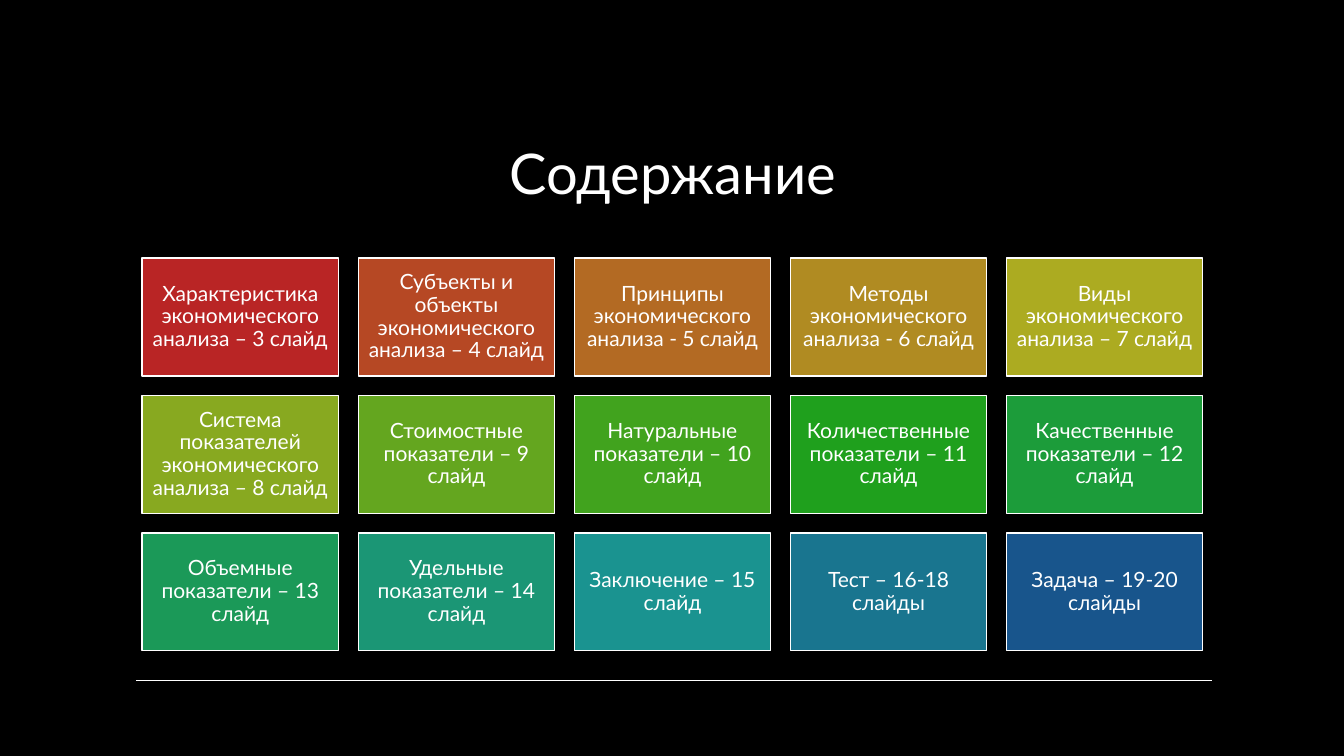
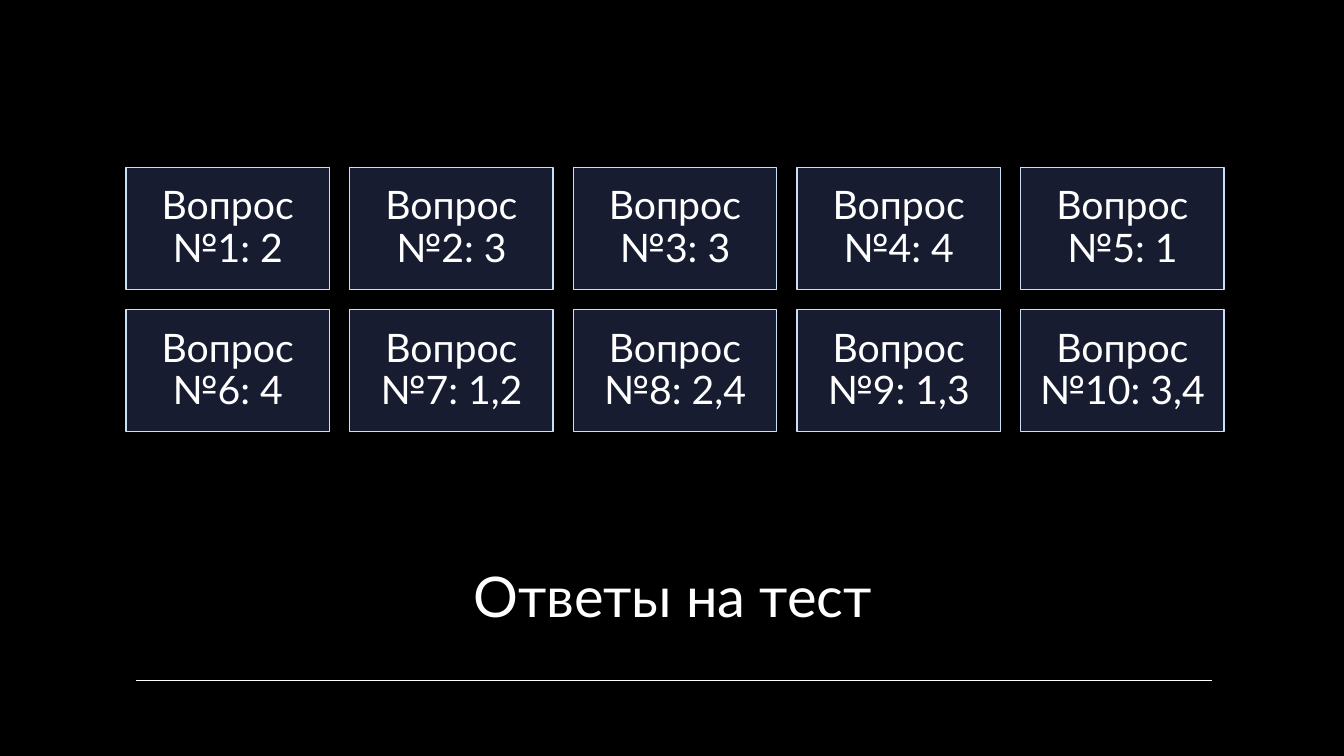
from lxml.etree import SubElement
from pptx import Presentation
from pptx.dml.color import RGBColor
from pptx.enum.shapes import MSO_CONNECTOR, MSO_SHAPE
from pptx.enum.text import MSO_ANCHOR, MSO_AUTO_SIZE, PP_ALIGN
from pptx.oxml.ns import qn
from pptx.util import Inches, Pt

# Shared style
FONT = "Lato"
BLACK = RGBColor(0x00, 0x00, 0x00)
WHITE = RGBColor(0xFF, 0xFF, 0xFF)
NAVY = RGBColor(0x18, 0x1C, 0x30)
PALE_BLUE = RGBColor(0xC8, 0xE1, 0xF4)
RAINBOW = [RGBColor.from_string(code) for code in (
    "B92525", "B64824", "B36A23", "B08B22", "ACAB21",
    "88A920", "64A61F", "41A31E", "1FA01D", "1C9C3A",
    "1B9958", "1B9675", "1A9390", "19758F", "18558C",
)]

# Card grid: gaps and heights are shares of the card width
COLUMNS = 5
GAP_SHARE = 0.1
HEIGHT_SHARE = 0.6

prs = Presentation()
prs.slide_width, prs.slide_height = Inches(13.33), Inches(7.5)
background = prs.slide_master.background.fill
background.solid()
background.fore_color.rgb = BLACK


def add_titled_slide(title_text, top, height):
    """Add a slide with a centred title and the rule along the bottom."""
    slide = prs.slides.add_slide(prs.slide_layouts[5])
    title = slide.shapes.title
    title.left, title.top = Inches(1.92), Inches(top)
    title.width, title.height = Inches(9.5), Inches(height)
    frame = title.text_frame
    frame.text = title_text
    frame.auto_size = MSO_AUTO_SIZE.NONE
    frame.vertical_anchor = MSO_ANCHOR.BOTTOM
    heading = frame.paragraphs[0]
    heading.alignment = PP_ALIGN.CENTER
    font = heading.runs[0].font
    font.name, font.size, font.color.rgb = FONT, Pt(40), WHITE

    rule = slide.shapes.add_connector(
        MSO_CONNECTOR.STRAIGHT,
        Inches(1.35), Inches(6.75), Inches(12.02), Inches(6.75))
    rule.line.color.rgb = WHITE
    rule.line.width = Pt(1)
    SubElement(rule._element.spPr, qn("a:effectLst"))
    return slide


def add_cards(slide, labels, fills, outline, left, top, span, inset, size):
    """Lay the labels out row by row as a grid of cards."""
    width = span / (COLUMNS + (COLUMNS - 1) * GAP_SHARE)
    height = width * HEIGHT_SHARE
    gap = width * GAP_SHARE
    for index, (label, fill) in enumerate(zip(labels, fills)):
        row, column = divmod(index, COLUMNS)
        card = slide.shapes.add_shape(
            MSO_SHAPE.RECTANGLE,
            Inches(left + column * (width + gap)),
            Inches(top + row * (height + gap)),
            Inches(width), Inches(height))
        card.shadow.inherit = False
        card.fill.solid()
        card.fill.fore_color.rgb = fill
        card.line.color.rgb = outline
        card.line.width = Pt(1)

        frame = card.text_frame
        frame.text = label
        frame.word_wrap = True
        frame.vertical_anchor = MSO_ANCHOR.MIDDLE
        frame.margin_left = frame.margin_right = Inches(inset)
        frame.margin_top = frame.margin_bottom = Inches(inset)
        paragraph = frame.paragraphs[0]
        paragraph.alignment = PP_ALIGN.CENTER
        paragraph.line_spacing = 0.9
        font = paragraph.runs[0].font
        font.name, font.size, font.color.rgb = FONT, Pt(size), WHITE


# Slide 1: contents
topics = [
    "Характеристика экономического анализа – 3 слайд",
    "Субъекты и объекты экономического анализа – 4 слайд",
    "Принципы экономического анализа - 5 слайд",
    "Методы экономического анализа - 6 слайд",
    "Виды экономического анализа – 7 слайд",
    "Система показателей экономического анализа – 8 слайд",
    "Стоимостные показатели – 9 слайд",
    "Натуральные показатели – 10 слайд",
    "Количественные показатели – 11 слайд",
    "Качественные показатели – 12 слайд",
    "Объемные показатели – 13 слайд",
    "Удельные показатели – 14 слайд",
    "Заключение – 15 слайд",
    "Тест – 16-18 слайды",
    "Задача – 19-20 слайды",
]
contents = add_titled_slide("Содержание", top=0.99, height=1.1)
add_cards(contents, topics, RAINBOW, WHITE,
          left=1.41, top=2.56, span=10.52, inset=0.06, size=15)

# Slide 2: test answers
answers = ["2", "3", "3", "4", "1", "4", "1,2", "2,4", "1,3", "3,4"]
questions = [f"Вопрос №{number}: {answer}"
             for number, answer in enumerate(answers, start=1)]
test_key = add_titled_slide("Ответы на тест", top=5.16, height=1.13)
add_cards(test_key, questions, [NAVY] * len(questions), PALE_BLUE,
          left=1.25, top=1.66, span=10.89, inset=0.12, size=28)

prs.save("out.pptx")
